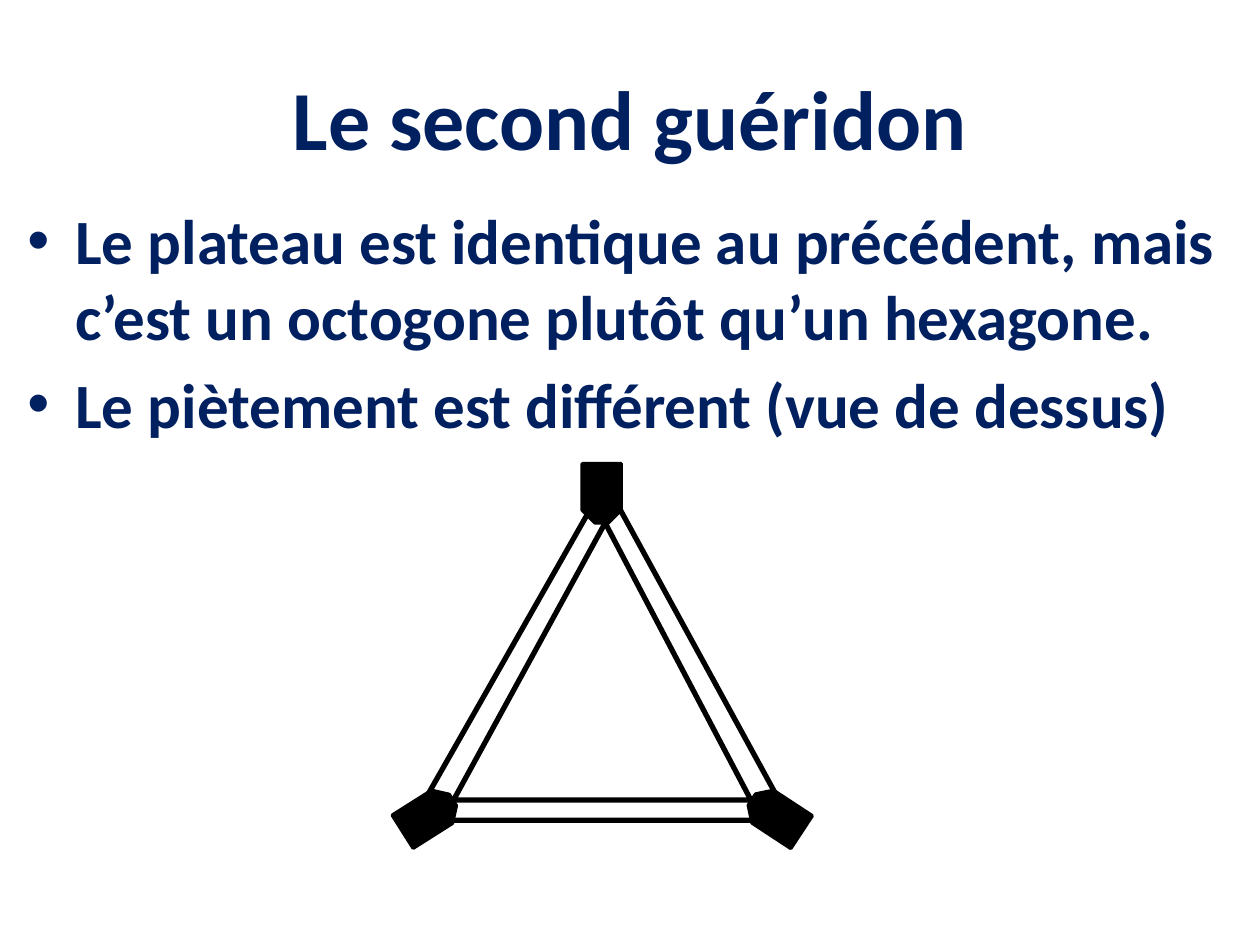
from lxml import etree
from pptx import Presentation
from pptx import util as u
from pptx.dml.color import RGBColor
from pptx.enum import shapes, text
from pptx.oxml import ns

NAVY = RGBColor(0x00, 0x20, 0x60)
BLACK = RGBColor(0x00, 0x00, 0x00)
FONT = "Calibri"


def add_span(para, wording, size, color=NAVY, bold=True):
    span = para.add_run()
    span.text = wording
    span.font.name = FONT
    span.font.size = u.Pt(size)
    span.font.bold = bold
    span.font.color.rgb = color


def set_bullet(para, indent):
    properties = para._p.get_or_add_pPr()
    properties.set("marL", str(u.Inches(indent)))
    properties.set("indent", str(-u.Inches(indent)))
    etree.SubElement(properties, ns.qn("a:buFont")).set("typeface", "Arial")
    etree.SubElement(properties, ns.qn("a:buChar")).set("char", "•")


class SlideBuilder:
    title_size = 48
    body_size = 36
    bullet_indent = 0.38

    def __init__(self, page):
        self.page = page

    def text_box(self, place, anchor):
        box = self.page.shapes.add_textbox(*map(u.Inches, place))
        frame = box.text_frame
        frame.word_wrap = True
        frame.vertical_anchor = anchor
        return frame

    def title(self, wording, place):
        para = self.text_box(place, text.MSO_ANCHOR.MIDDLE).paragraphs[0]
        para.alignment = text.PP_ALIGN.CENTER
        add_span(para, wording, self.title_size)

    def bullets(self, items, place):
        frame = self.text_box(place, text.MSO_ANCHOR.TOP)
        for index, item in enumerate(items):
            para = frame.add_paragraph() if index else frame.paragraphs[0]
            if index:
                para.space_before = u.Pt(self.body_size * 0.2)
            set_bullet(para, self.bullet_indent)
            add_span(para, item, self.body_size)

    def outline(self, kind, place, adjustments, width):
        shape = self.page.shapes.add_shape(kind, *map(u.Inches, place))
        shape.shadow.inherit = False
        for index, value in enumerate(adjustments):
            shape.adjustments[index] = value
        shape.fill.background()
        shape.line.color.rgb = BLACK
        shape.line.width = u.Pt(width)
        return shape

    def triangle(self, place):
        self.outline(shapes.MSO_SHAPE.ISOSCELES_TRIANGLE, place, [0.51], 3)

    def leg(self, left, top, rotation):
        leg = self.outline(shapes.MSO_SHAPE.SNIP_2_SAME_RECTANGLE,
                           (left, top, 0.31, 0.47), [0.33, 0], 2)
        leg.rotation = rotation
        leg.fill.solid()
        leg.fill.fore_color.rgb = BLACK


def main():
    deck = Presentation()
    deck.slide_width = u.Inches(10)
    deck.slide_height = u.Inches(7.5)
    builder = SlideBuilder(deck.slides.add_slide(deck.slide_layouts[6]))

    builder.triangle((3.6, 4.15, 2.36, 2.2))
    builder.title("Le second guéridon", (0.5, 0.3, 9, 1.25))
    builder.bullets([
        "Le plateau est identique au précédent, mais c’est un octogone "
        "plutôt qu’un hexagone.",
        "Le piètement est différent (vue de dessus)",
    ], (0.12, 1.55, 9.76, 5.23))
    builder.triangle((3.28, 3.83, 2.99, 2.68))
    for left, top, rotation in [(6.01, 6.24, 303.3), (3.24, 6.24, 57.7),
                                (4.62, 3.68, 180)]:
        builder.leg(left, top, rotation)

    deck.save("out.pptx")


if __name__ == "__main__":
    main()
